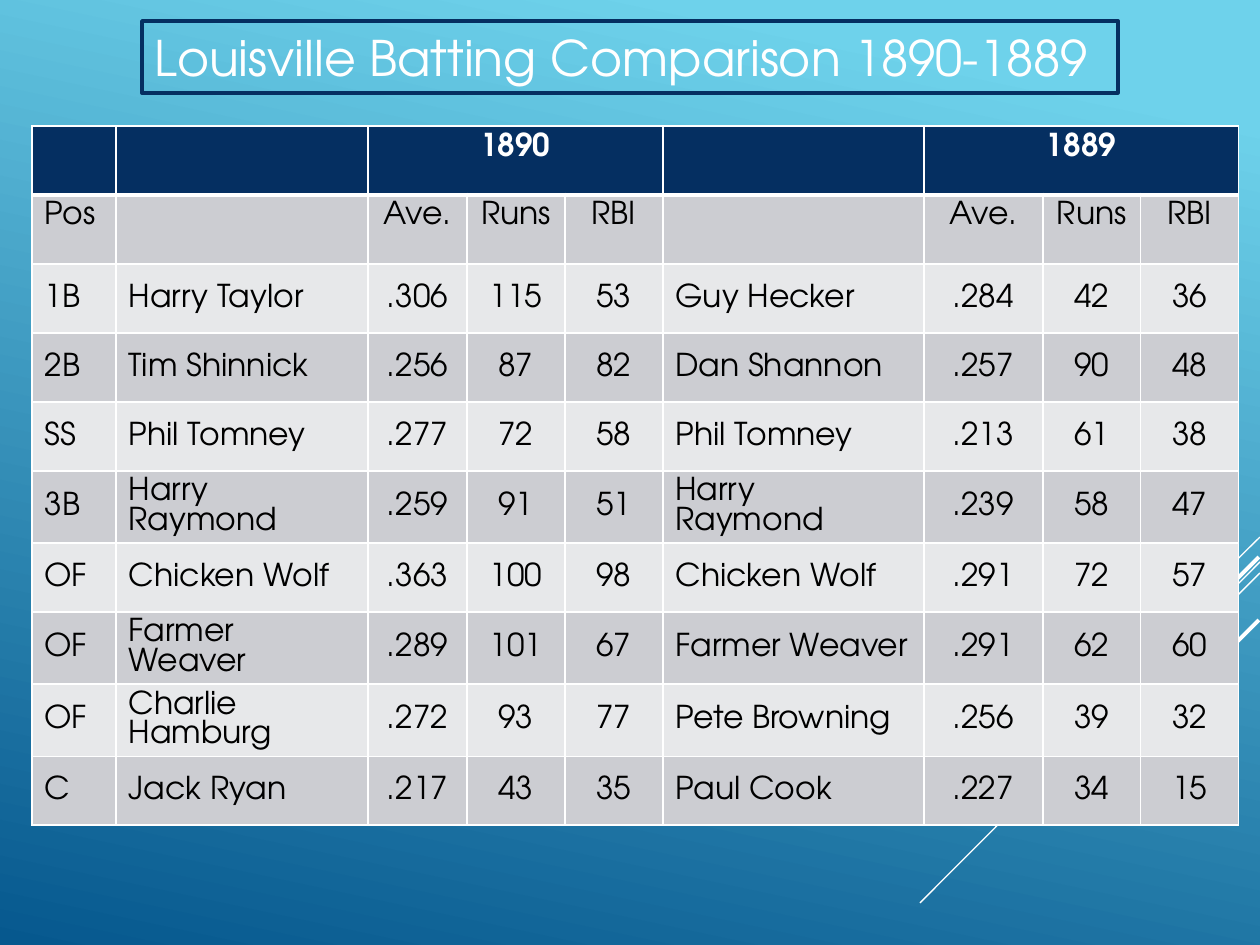
"""Build the Louisville 1890-1889 batting comparison slide."""
from lxml.etree import SubElement
from pptx import Presentation
from pptx.dml.color import RGBColor
from pptx.enum.shapes import MSO_CONNECTOR
from pptx.enum.text import MSO_ANCHOR, MSO_AUTO_SIZE, PP_ALIGN
from pptx.oxml.ns import qn
from pptx.util import Pt

PX = 914400 // 126
FONT = "TeX Gyre Adventor"
NAVY, WHITE, BLACK = "052F61", "FFFFFF", "000000"
BANDS = ("CCCDD2", "E7E8EA")
GRADIENT = [(0.1, "6ED2EB"), (1, "06588E")]

TITLE = "Louisville Batting Comparison 1890-1889"
TITLE_BOX = (142, 21, 976, 72)
STREAKS = [
    (1260, 537, 1155, 641, 0.75),
    (1260, 562, 920, 903, 0.75),
    (1260, 573, 1043, 790, 0.75),
    (1259, 557, 1061, 755, 2.25),
    (1259, 620, 1115, 764, 2.25),
]

TABLE_LEFT, TABLE_TOP, ROW_H = 32, 126, 69
COL_W = [84, 252, 99, 98, 98, 261, 119, 98, 98]
LEFT_COLS = (0, 1, 5)
YEAR_COLS = (2, 6)
ROWS = [
    ("", "", "1890", "", "", "", "1889", "", ""),
    ("Pos", "", "Ave.", "Runs", "RBI", "", "Ave.", "Runs", "RBI"),
    ("1B", "Harry Taylor", ".306", "115", "53", "Guy Hecker", ".284", "42", "36"),
    ("2B", "Tim Shinnick", ".256", "87", "82", "Dan Shannon", ".257", "90", "48"),
    ("SS", "Phil Tomney", ".277", "72", "58", "Phil Tomney", ".213", "61", "38"),
    ("3B", "Harry Raymond", ".259", "91", "51", "Harry Raymond", ".239", "58", "47"),
    ("OF", "Chicken Wolf", ".363", "100", "98", "Chicken Wolf", ".291", "72", "57"),
    ("OF", "Farmer Weaver", ".289", "101", "67", "Farmer Weaver", ".291", "62", "60"),
    ("OF", "Charlie Hamburg", ".272", "93", "77", "Pete Browning", ".256", "39", "32"),
    ("C", "Jack Ryan", ".217", "43", "35", "Paul Cook", ".227", "34", "15"),
]


def rgb(value):
    return RGBColor.from_string(value)


def emu(*lengths):
    return [n * PX for n in lengths]


def style(p, size, color, align, bold=False):
    p.alignment = align
    p.font.name, p.font.size, p.font.bold = FONT, Pt(size), bold
    p.font.color.rgb = rgb(color)


def add_background(s):
    fill = s.background.fill
    fill.gradient()
    fill.gradient_angle = 360 - 102
    for stop, (position, color) in zip(fill.gradient_stops, GRADIENT):
        stop.position = position
        stop.color.rgb = rgb(color)


def add_title(s):
    sp = s.shapes.title
    sp.left, sp.top, sp.width, sp.height = emu(*TITLE_BOX)
    sp.fill.background()
    sp.line.color.rgb, sp.line.width = rgb(NAVY), Pt(2)
    tf = sp.text_frame
    tf.text = TITLE
    tf.word_wrap, tf.auto_size = True, MSO_AUTO_SIZE.NONE
    tf.vertical_anchor = MSO_ANCHOR.MIDDLE
    style(tf.paragraphs[0], 28, WHITE, PP_ALIGN.LEFT)


def add_streaks(s):
    for *ends, width in STREAKS:
        line = s.shapes.add_connector(MSO_CONNECTOR.STRAIGHT, *emu(*ends))
        line.line.color.rgb, line.line.width = rgb(WHITE), Pt(width)
        SubElement(line._element.spPr, qn("a:effectLst"))


def add_borders(cell, row):
    tcPr = cell._tc.get_or_add_tcPr()
    widths = {"L": 1, "R": 1, "T": 3 if row == 1 else 1, "B": 3 if row == 0 else 1}
    for side, width in widths.items():
        ln = SubElement(tcPr, qn(f"a:ln{side}"), w=str(Pt(width)))
        SubElement(SubElement(ln, qn("a:solidFill")), qn("a:srgbClr"), val=WHITE)


def fill_cell(cell, row, col, text):
    header = row == 0
    cell.text = text
    cell.vertical_anchor = MSO_ANCHOR.TOP if row < 2 else MSO_ANCHOR.MIDDLE
    p = cell.text_frame.paragraphs[0]
    p.line_spacing = Pt(17)
    align = PP_ALIGN.LEFT if col in LEFT_COLS else PP_ALIGN.CENTER
    style(p, 18, WHITE if header else BLACK, align, header)
    add_borders(cell, row)
    cell.fill.solid()
    cell.fill.fore_color.rgb = rgb(NAVY if header else BANDS[(row - 1) % 2])


def add_batting_table(s):
    box = emu(TABLE_LEFT, TABLE_TOP, sum(COL_W), ROW_H * len(ROWS))
    table = s.shapes.add_table(len(ROWS), len(COL_W), *box).table
    for column, width in zip(table.columns, COL_W):
        column.width = width * PX
    for r, values in enumerate(ROWS):
        table.rows[r].height = ROW_H * PX
        for c, text in enumerate(values):
            fill_cell(table.cell(r, c), r, c, text)
    for c in YEAR_COLS:
        table.cell(0, c).merge(table.cell(0, c + 2))


def main():
    prs = Presentation()
    prs.slide_width, prs.slide_height = emu(1260, 945)
    s = prs.slides.add_slide(prs.slide_layouts[5])
    add_background(s)
    add_streaks(s)
    add_batting_table(s)
    add_title(s)
    prs.save("out.pptx")


if __name__ == "__main__":
    main()
